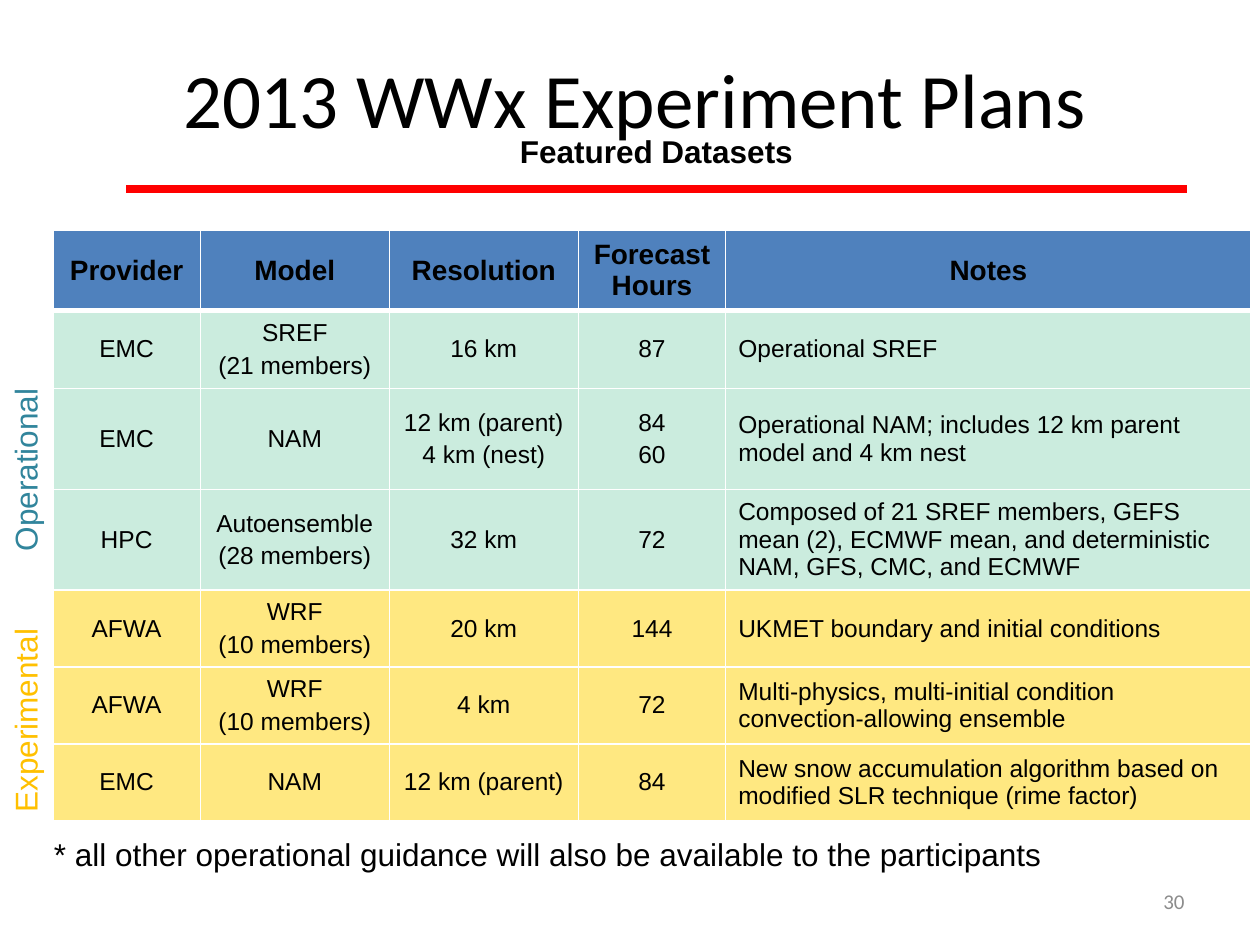
from lxml.etree import SubElement
from pptx import Presentation
from pptx.dml.color import RGBColor
from pptx.enum.shapes import MSO_CONNECTOR
from pptx.enum.text import MSO_ANCHOR, PP_ALIGN
from pptx.oxml.ns import qn
from pptx.util import Inches, Pt

BLACK = RGBColor(0x00, 0x00, 0x00)
WHITE = RGBColor(0xFF, 0xFF, 0xFF)
RED = RGBColor(0xFF, 0x00, 0x00)
GRAY = RGBColor(0x8C, 0x8C, 0x8C)
BLUE = RGBColor(0x4F, 0x81, 0xBD)
MINT = RGBColor(0xCB, 0xEC, 0xDE)
YELLOW = RGBColor(0xFF, 0xE8, 0x81)
TEAL = RGBColor(0x31, 0x85, 0x9C)
AMBER = RGBColor(0xFF, 0xC0, 0x00)

TITLE = {"name": "Calibri", "size": Pt(44)}
SUBTITLE = {"name": "Arial", "size": Pt(18), "bold": True}
LABEL = {"name": "Arial", "size": Pt(18)}
HEADING = {"name": "Arial", "size": Pt(16), "bold": True}
BODY = {"name": "Arial", "size": Pt(14), "bold": False}
NUMBER = {"name": "Calibri", "size": Pt(12)}

COLUMN_WIDTHS = [1.17, 1.5, 1.5, 1.17, 4.17]
ROW_HEIGHTS = [0.63, 0.62, 0.8, 0.8, 0.61, 0.61, 0.61]
HEADINGS = ["Provider", "Model", "Resolution", "Forecast Hours", "Notes"]
OPERATIONAL = [
    ["EMC", "SREF\n(21 members)", "16 km", "87", "Operational SREF"],
    ["EMC", "NAM", "12 km (parent)\n4 km (nest)", "84\n60",
     "Operational NAM; includes 12 km parent model and 4 km nest"],
    ["HPC", "Autoensemble\n(28 members)", "32 km", "72",
     "Composed of 21 SREF members, GEFS mean (2), ECMWF mean, "
     "and deterministic NAM, GFS, CMC, and ECMWF"],
]
EXPERIMENTAL = [
    ["AFWA", "WRF\n(10 members)", "20 km", "144",
     "UKMET boundary and initial conditions"],
    ["AFWA", "WRF\n(10 members)", "4 km", "72",
     "Multi-physics, multi-initial condition convection-allowing ensemble"],
    ["EMC", "NAM", "12 km (parent)", "84",
     "New snow accumulation algorithm based on modified SLR technique (rime factor)"],
]


def write(frame, text, style, color=BLACK, align=PP_ALIGN.LEFT):
    frame.text = text
    for index, paragraph in enumerate(frame.paragraphs):
        paragraph.alignment = align
        if index:
            paragraph.space_before = Pt(2.8)
        for run in paragraph.runs:
            for attribute, value in style.items():
                setattr(run.font, attribute, value)
            run.font.color.rgb = color


def add_text(slide, box, text, style, color=BLACK, align=PP_ALIGN.LEFT,
             anchor=MSO_ANCHOR.TOP):
    holder = slide.shapes.add_textbox(*map(Inches, box))
    holder.text_frame.word_wrap = True
    holder.text_frame.vertical_anchor = anchor
    write(holder.text_frame, text, style, color, align)
    return holder


def add_header(slide, left, top, width):
    add_text(slide, (left, top, width, 1.25), "2013 WWx Experiment Plans",
             TITLE, align=PP_ALIGN.CENTER, anchor=MSO_ANCHOR.MIDDLE)
    add_text(slide, (left + 2.67, top + 0.85, 4, 0.4), "Featured Datasets",
             SUBTITLE, align=PP_ALIGN.CENTER)
    rule_top = Inches(top + 1.35)
    rule = slide.shapes.add_connector(
        MSO_CONNECTOR.STRAIGHT, Inches(left + 0.46), rule_top,
        Inches(left + 8.88), rule_top)
    rule.line.color.rgb = RED
    rule.line.width = Pt(4.5)
    SubElement(rule._element.spPr, qn("a:effectLst"))


def add_borders(cell, top, bottom):
    properties = cell._tc.get_or_add_tcPr()
    for side, points in {"L": 1, "R": 1, "T": top, "B": bottom}.items():
        border = SubElement(properties, qn(f"a:ln{side}"), w=str(Pt(points)))
        fill = SubElement(border, qn("a:solidFill"))
        SubElement(fill, qn("a:srgbClr"), val=str(WHITE))


def add_datasets(slide, left, top):
    rows = [HEADINGS, *OPERATIONAL, *EXPERIMENTAL]
    fills = [BLUE] + [MINT] * len(OPERATIONAL) + [YELLOW] * len(EXPERIMENTAL)
    table = slide.shapes.add_table(
        len(rows), len(HEADINGS), Inches(left), Inches(top),
        Inches(sum(COLUMN_WIDTHS)), Inches(sum(ROW_HEIGHTS))).table
    table.first_row = table.horz_banding = False
    for column, width in zip(table.columns, COLUMN_WIDTHS):
        column.width = Inches(width)
    for r, (texts, fill) in enumerate(zip(rows, fills)):
        table.rows[r].height = Inches(ROW_HEIGHTS[r])
        for c, text in enumerate(texts):
            cell = table.cell(r, c)
            is_note = r > 0 and c == len(HEADINGS) - 1
            write(cell.text_frame, text, BODY if r else HEADING,
                  align=PP_ALIGN.LEFT if is_note else PP_ALIGN.CENTER)
            cell.vertical_anchor = MSO_ANCHOR.MIDDLE
            add_borders(cell, 3 if r == 1 else 1, 1 if r else 3)
            cell.fill.solid()
            cell.fill.fore_color.rgb = fill


def add_group_label(slide, center_x, center_y, text, color):
    width, height = 2, 0.4
    box = (center_x - width / 2, center_y - height / 2, width, height)
    label = add_text(slide, box, text, LABEL, color, PP_ALIGN.CENTER)
    label.rotation = 270


def add_footer(slide, left, top):
    add_text(slide, (left, top, 8.75, 0.4),
             "* all other operational guidance will also be available to the participants",
             LABEL)
    add_text(slide, (left + 6.84, top + 0.37, 2.33, 0.4), "30", NUMBER, GRAY,
             PP_ALIGN.RIGHT, MSO_ANCHOR.MIDDLE)


def main():
    presentation = Presentation()
    presentation.slide_width = Inches(10)
    presentation.slide_height = Inches(7.5)
    slide = presentation.slides.add_slide(presentation.slide_layouts[6])
    add_header(slide, 0.54, 0.15, 9)
    add_datasets(slide, 0.42, 1.83)
    add_group_label(slide, 0.2, 3.73, "Operational", TEAL)
    add_group_label(slide, 0.2, 5.72, "Experimental", AMBER)
    add_footer(slide, 0.33, 6.58)
    presentation.save("out.pptx")


if __name__ == "__main__":
    main()
